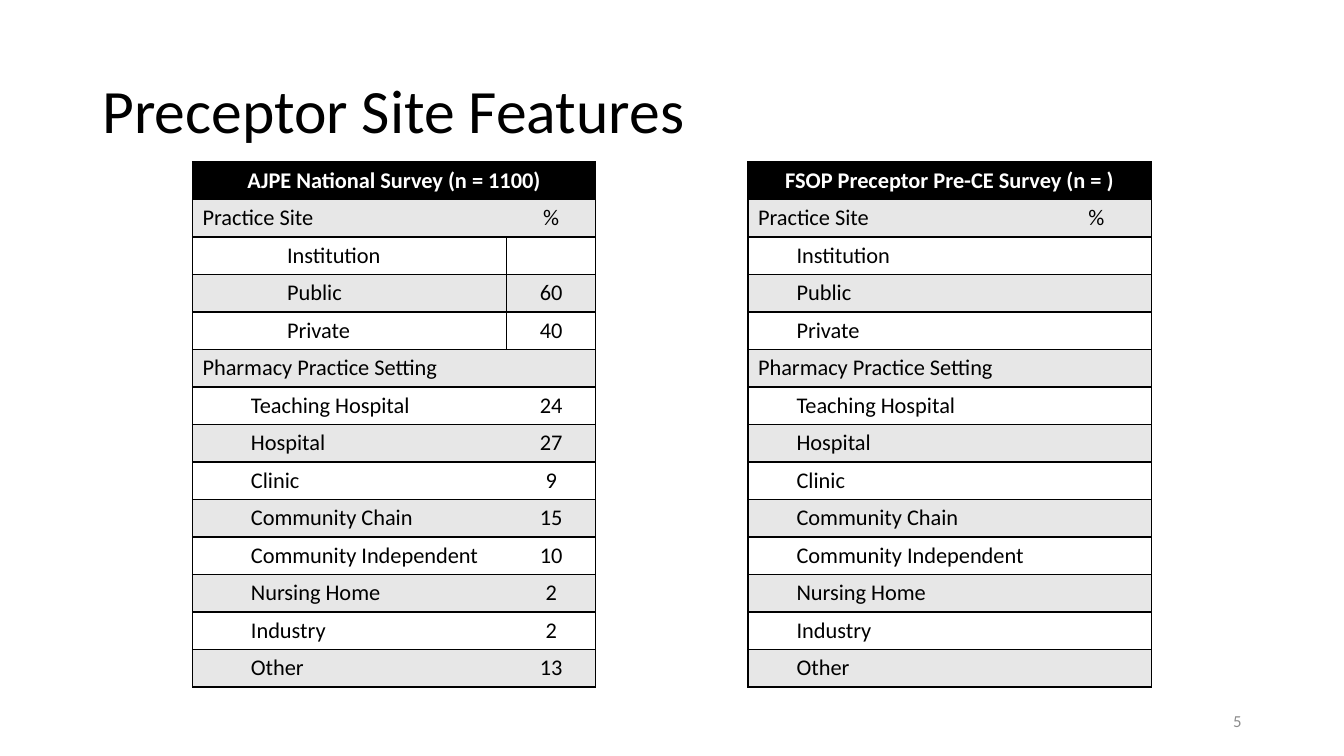
from dataclasses import dataclass

from lxml.etree import SubElement
from pptx import Presentation
from pptx.dml.color import RGBColor
from pptx.enum.text import MSO_ANCHOR, PP_ALIGN
from pptx.oxml.ns import qn
from pptx.util import Cm, Pt

TITLE = "Preceptor Site Features"
PAGE = "5"
SITES = ["Institution", "Public", "Private"]
SETTINGS = ["Teaching Hospital", "Hospital", "Clinic", "Community Chain",
            "Community Independent", "Nursing Home", "Industry", "Other"]
LABELS = ["Practice Site", *SITES, "Pharmacy Practice Setting", *SETTINGS]

SURVEYS = [
    {"title": "AJPE National Survey (n = 1100)",
     "left": 4.85,
     "widths": [1.22, 0.91, 5.79, 2.24],
     "site_col": 2,
     "divided": SITES,
     "full_width": [],
     "values": {"Practice Site": "%", "Public": "60", "Private": "40",
                "Teaching Hospital": "24", "Hospital": "27", "Clinic": "9",
                "Community Chain": "15", "Community Independent": "10",
                "Nursing Home": "2", "Industry": "2", "Other": "13"}},
    {"title": "FSOP Preceptor Pre-CE Survey (n = )",
     "left": 18.85,
     "widths": [0.97, 6.43, 2.76],
     "site_col": 1,
     "divided": [],
     "full_width": SETTINGS[:-1],
     "values": {"Practice Site": "%"}},
]
TABLE_TOP = 4.08
ROW_HEIGHT = 0.945
NO_STYLE = "{2D5ABB26-0587-4C30-8999-92F81FD0307C}"


@dataclass(frozen=True)
class Theme:
    font: str = "Calibri"
    ink: str = "000000"
    paper: str = "FFFFFF"
    band: str = "E7E7E7"
    muted: str = "8C8C8C"
    title: int = 44
    body: int = 16
    page: int = 12
    rule: int = 1


THEME = Theme()


def write(tf, text, size, color, align=PP_ALIGN.LEFT, bold=False):
    p = tf.paragraphs[0]
    p.alignment = align
    r = p.add_run()
    r.text = text
    r.font.name = THEME.font
    r.font.size = Pt(size)
    r.font.bold = bold
    r.font.color.rgb = RGBColor.from_string(color)
    return p


def add_text(slide, box, text, size, color, align=PP_ALIGN.LEFT):
    tf = slide.shapes.add_textbox(*map(Cm, box)).text_frame
    tf.word_wrap = True
    tf.vertical_anchor = MSO_ANCHOR.MIDDLE
    return write(tf, text, size, color, align)


def style_cell(cell, sides, fill):
    tc_pr = cell._tc.get_or_add_tcPr()
    for side in sides:
        ln = SubElement(tc_pr, qn(f"a:ln{side}"), w=str(Pt(THEME.rule)))
        SubElement(SubElement(ln, qn("a:solidFill")), qn("a:srgbClr"), val=THEME.ink)
    cell.fill.solid()
    cell.fill.fore_color.rgb = RGBColor.from_string(fill)


def row_parts(survey, label):
    last = len(survey["widths"]) - 1
    if label in SITES:
        start = survey["site_col"]
    else:
        start = 1 if label in SETTINGS else 0
    parts = [(0, start - 1, "", PP_ALIGN.LEFT)] if start else []
    if label in survey["full_width"]:
        return parts + [(start, last, label, PP_ALIGN.LEFT)]
    value = survey["values"].get(label, "")
    return parts + [(start, last - 1, label, PP_ALIGN.LEFT),
                    (last, last, value, PP_ALIGN.CENTER)]


def fill_row(table, row, parts, fill, color, bold=False, divided=False):
    last = len(table.columns) - 1
    for start, end, text, align in parts:
        cell = table.cell(row, start)
        if end > start:
            cell.merge(table.cell(row, end))
        if text:
            write(cell.text_frame, text, THEME.body, color, align, bold)
        for col in range(start, end + 1):
            left = col == 0 or (divided and col == last)
            right = end == last or (divided and end == last - 1)
            sides = ["L"] * left + ["R"] * right + ["T", "B"]
            style_cell(table.cell(row, col), sides, fill)
            p = table.cell(row, col).text_frame.paragraphs[0]
            SubElement(p._p, qn("a:endParaRPr"), sz=str(THEME.body * 100))


def add_survey(slide, survey):
    widths = survey["widths"]
    rows = len(LABELS) + 1
    frame = slide.shapes.add_table(
        rows, len(widths), Cm(survey["left"]), Cm(TABLE_TOP),
        Cm(sum(widths)), Cm(ROW_HEIGHT * rows))
    table = frame.table
    table.first_row = table.horz_banding = False
    table._tbl.tblPr.find(qn("a:tableStyleId")).text = NO_STYLE
    for column, width in zip(table.columns, widths):
        column.width = Cm(width)
    for row in table.rows:
        row.height = Cm(ROW_HEIGHT)
    header = [(0, len(widths) - 1, survey["title"], PP_ALIGN.CENTER)]
    fill_row(table, 0, header, THEME.ink, THEME.paper, bold=True)
    for i, label in enumerate(LABELS, 1):
        fill = THEME.band if i % 2 else THEME.paper
        fill_row(table, i, row_parts(survey, label), fill, THEME.ink,
                 divided=label in survey["divided"])


def main():
    prs = Presentation()
    prs.slide_width, prs.slide_height = Cm(33.87), Cm(19.05)
    slide = prs.slides.add_slide(prs.slide_layouts[6])
    title = add_text(slide, (2.33, 1.01, 29.21, 3.68), TITLE, THEME.title, THEME.ink)
    title.line_spacing = 0.9
    for survey in SURVEYS:
        add_survey(slide, survey)
    add_text(slide, (23.92, 17.66, 7.62, 1.01), PAGE, THEME.page, THEME.muted,
             PP_ALIGN.RIGHT)
    prs.save("out.pptx")


if __name__ == "__main__":
    main()
